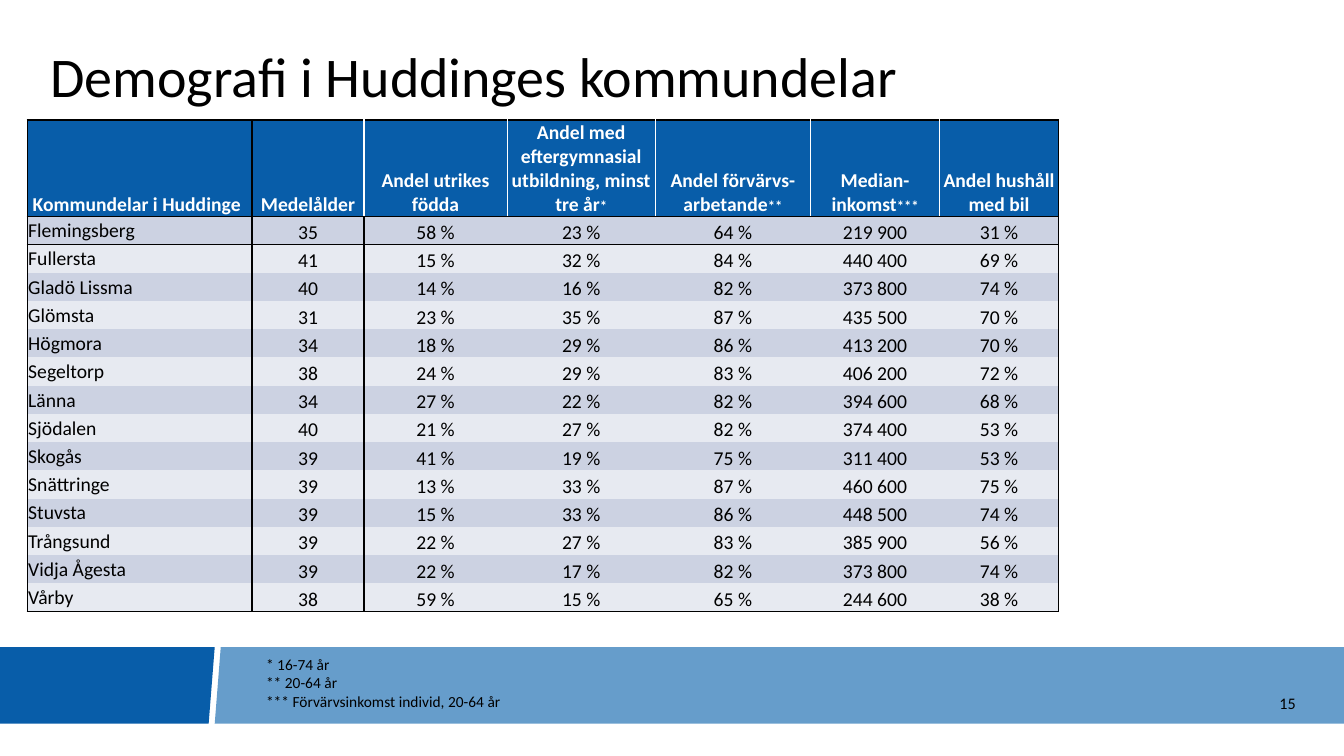
from lxml import etree
from pptx import Presentation
from pptx.dml.color import RGBColor
from pptx.enum.text import MSO_ANCHOR, MSO_AUTO_SIZE, PP_ALIGN
from pptx.oxml.ns import qn
from pptx.util import Inches, Pt

FONT = "Calibri"
BLACK, WHITE, DARK_BLUE, LIGHT_BLUE = "000000", "FFFFFF", "085DA9", "669DCB"
BAND_FILLS = ("CCD2E2", "E7EAF1")
PLAIN_STYLE = "{2D5ABB26-0587-4C30-8999-92F81FD0307C}"  # No Style, No Grid

TITLE = "Demografi i Huddinges kommundelar"
# (heading, footnote mark, column width)
COLUMNS = [
    (" Kommundelar i Huddinge", "", 2.23),
    ("Medelålder", "", 1.11),
    ("Andel utrikes födda", "", 1.42),
    ("Andel med eftergymnasial utbildning, minst tre år", "*", 1.47),
    ("Andel förvärvs-arbetande", "**", 1.54),
    ("Median-inkomst", "***", 1.28),
    ("Andel hushåll med bil", "", 1.18),
]
DISTRICTS = [
    ("Flemingsberg", "35", "58 %", "23 %", "64 %", "219 900", "31 %"),
    ("Fullersta", "41", "15 %", "32 %", "84 %", "440 400", "69 %"),
    ("Gladö Lissma", "40", "14 %", "16 %", "82 %", "373 800", "74 %"),
    ("Glömsta", "31", "23 %", "35 %", "87 %", "435 500", "70 %"),
    ("Högmora", "34", "18 %", "29 %", "86 %", "413 200", "70 %"),
    ("Segeltorp", "38", "24 %", "29 %", "83 %", "406 200", "72 %"),
    ("Länna", "34", "27 %", "22 %", "82 %", "394 600", "68 %"),
    ("Sjödalen", "40", "21 %", "27 %", "82 %", "374 400", "53 %"),
    ("Skogås", "39", "41 %", "19 %", "75 %", "311 400", "53 %"),
    ("Snättringe", "39", "13 %", "33 %", "87 %", "460 600", "75 %"),
    ("Stuvsta", "39", "15 %", "33 %", "86 %", "448 500", "74 %"),
    ("Trångsund", "39", "22 %", "27 %", "83 %", "385 900", "56 %"),
    ("Vidja Ågesta", "39", "22 %", "17 %", "82 %", "373 800", "74 %"),
    ("Vårby", "38", "59 %", "15 %", "65 %", "244 600", "38 %"),
]
FOOTNOTES = ["* 16-74 år", "** 20-64 år", "*** Förvärvsinkomst individ, 20-64 år"]
PAGE_NUMBER = "15"

BAND_TOP, BAND_BOTTOM = 6.42, 7.18
# (fill, corner points)
FOOTER_BANDS = [
    (LIGHT_BLUE, [(2.19, BAND_TOP), (13.33, BAND_TOP), (13.33, BAND_BOTTOM), (2.13, BAND_BOTTOM)]),
    (DARK_BLUE, [(0, BAND_TOP), (2.13, BAND_TOP), (2.07, BAND_BOTTOM), (0, BAND_BOTTOM)]),
]


def rgb(color):
    return RGBColor.from_string(color)


def style(run, size, color=BLACK, bold=False):
    font = run.font
    font.name, font.size, font.bold = FONT, Pt(size), bold
    font.color.rgb = rgb(color)


def add_run(p, text, size, color=BLACK, bold=False):
    r = p.add_run()
    r.text = text
    style(r, size, color, bold)


def add_band(slide, color, points):
    corners = [(Inches(x), Inches(y)) for x, y in points]
    builder = slide.shapes.build_freeform(*corners[0])
    builder.add_line_segments(corners[1:])
    sp = builder.convert_to_shape()
    sp.shadow.inherit = False
    sp.fill.solid()
    sp.fill.fore_color.rgb = rgb(color)
    sp.line.fill.background()


def add_text(slide, box, lines, size, align=PP_ALIGN.LEFT, anchor=MSO_ANCHOR.TOP):
    tf = slide.shapes.add_textbox(*map(Inches, box)).text_frame
    tf.word_wrap = True
    tf.vertical_anchor = anchor
    for i, line in enumerate(lines):
        p = tf.paragraphs[0] if i == 0 else tf.add_paragraph()
        p.alignment = align
        add_run(p, line, size)


def set_borders(cell, **colors):
    """Draw 1 pt borders; keys are L, R, T and B, and None leaves a side open."""
    tc_pr = cell._tc.get_or_add_tcPr()
    for side in "LRTB":
        if colors[side]:
            ln = etree.SubElement(tc_pr, qn(f"a:ln{side}"), w=str(Pt(1)))
            fill = etree.SubElement(ln, qn("a:solidFill"))
            etree.SubElement(fill, qn("a:srgbClr"), val=colors[side])


def format_cell(cell, row, col):
    """Set the borders, fill, margins and alignment that follow from the position."""
    inner = WHITE if row == 0 else None
    set_borders(
        cell,
        L=BLACK if col <= 1 else inner,
        R=BLACK if col in (0, len(COLUMNS) - 1) else inner,
        T=BLACK if row <= 1 else None,
        B=BLACK if row in (0, len(DISTRICTS)) else None,
    )
    cell.fill.solid()
    cell.fill.fore_color.rgb = rgb(BAND_FILLS[(row - 1) % 2] if row else DARK_BLUE)
    cell.margin_left = cell.margin_right = cell.margin_top = Inches(0.01)
    cell.margin_bottom = 0
    cell.vertical_anchor = MSO_ANCHOR.MIDDLE if row and col == 0 else MSO_ANCHOR.BOTTOM
    cell.text_frame.paragraphs[0].alignment = PP_ALIGN.CENTER if col else PP_ALIGN.LEFT


def add_district_table(slide):
    frame = slide.shapes.add_table(len(DISTRICTS) + 1, len(COLUMNS), Inches(0.27),
                                   Inches(1.19), Inches(10.22), Inches(4.84))
    table = frame.table
    table.horz_banding = False
    table._tbl.tblPr.find(qn("a:tableStyleId")).text = PLAIN_STYLE
    for i, row in enumerate(table.rows):
        row.height = Inches(0.28 if i else 0.92)
    for col, (heading, mark, width) in enumerate(COLUMNS):
        table.columns[col].width = Inches(width)
        cell = table.cell(0, col)
        format_cell(cell, 0, col)
        p = cell.text_frame.paragraphs[0]
        add_run(p, heading, 14, WHITE, True)
        if mark:
            add_run(p, mark, 10.5, WHITE, True)
    for row, values in enumerate(DISTRICTS, 1):
        for col, value in enumerate(values):
            cell = table.cell(row, col)
            format_cell(cell, row, col)
            add_run(cell.text_frame.paragraphs[0], value, 14)


def main():
    prs = Presentation()
    prs.slide_width, prs.slide_height = Inches(13.33), Inches(7.5)
    slide = prs.slides.add_slide(prs.slide_layouts[5])

    for color, points in FOOTER_BANDS:
        add_band(slide, color, points)

    title = slide.shapes.title
    title.left, title.top, title.width, title.height = map(Inches, (0.4, 0.39, 12.38, 0.8))
    tf = title.text_frame
    tf.text = TITLE
    tf.auto_size = MSO_AUTO_SIZE.NONE
    tf.vertical_anchor = MSO_ANCHOR.MIDDLE
    p = tf.paragraphs[0]
    p.alignment, p.line_spacing = PP_ALIGN.LEFT, 0.9
    style(p.runs[0], 40)

    add_district_table(slide)
    add_text(slide, (11.36, 6.77, 1.59, 0.4), [PAGE_NUMBER], 11.5,
             PP_ALIGN.RIGHT, MSO_ANCHOR.MIDDLE)
    add_text(slide, (2.54, 6.45, 8.82, 0.66), FOOTNOTES, 11)
    prs.save("out.pptx")


if __name__ == "__main__":
    main()
